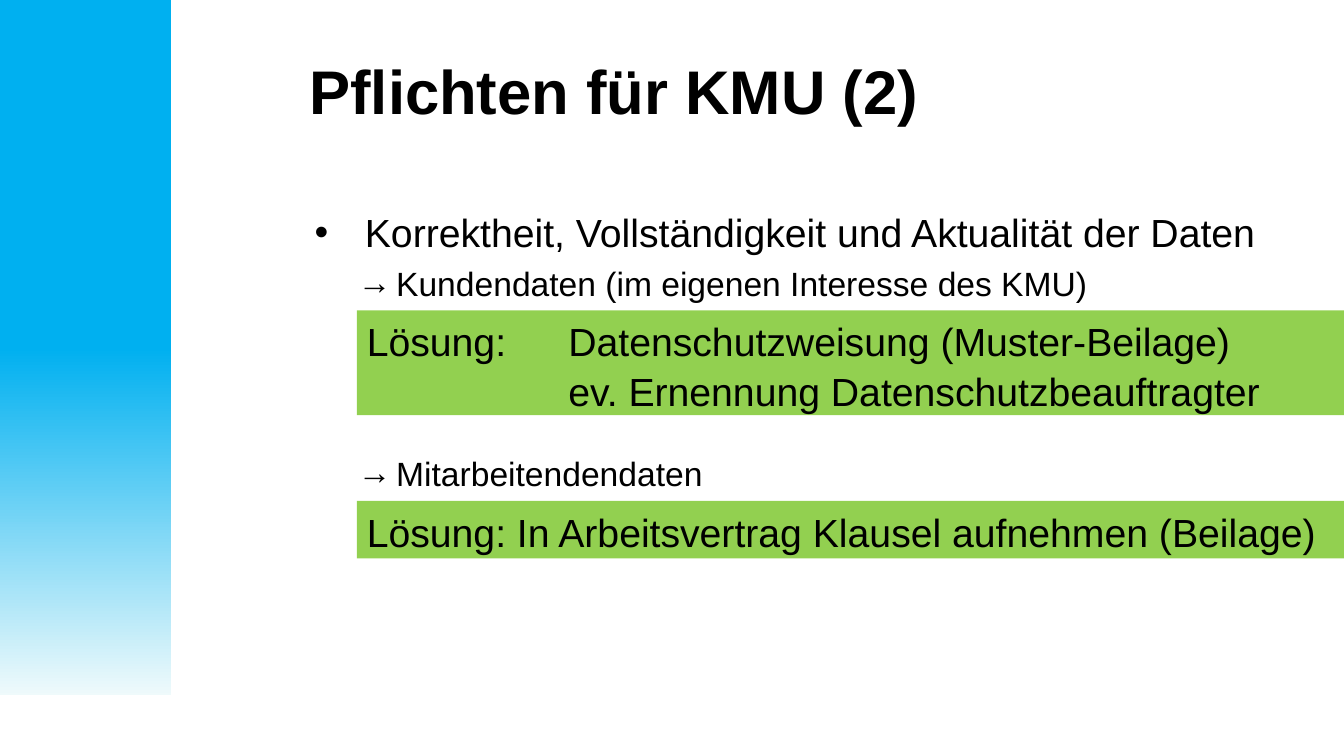
from dataclasses import dataclass

import pptx
import pptx.dml.color
import pptx.enum.dml
import pptx.enum.shapes
import pptx.enum.text
import pptx.oxml.ns
import pptx.util
from lxml import etree

COLUMNS, ROWS = 80, 45
CELL = pptx.util.Inches(1 / 6)


@dataclass(frozen=True)
class Theme:
    font: str = "Arial"
    text: str = "000000"
    band_top: str = "00B0F0"
    band_bottom: str = "EFFAFB"
    solution: str = "92D050"
    title_size: int = 44
    main_size: int = 28
    sub_size: int = 24


THEME = Theme()

# Bullet styles: character, left margin and hanging indent in inches
MAIN_BULLET = ("•", 0.88, 0.5)
SUB_BULLET = ("→", 1.19, 0.38)

# List entries: text, level, size, bullet, space before in points
DUTIES = [
    ("Korrektheit, Vollständigkeit und Aktualität der Daten",
     0, THEME.main_size, MAIN_BULLET, 0),
    ("Kundendaten (im eigenen Interesse des KMU)",
     1, THEME.sub_size, SUB_BULLET, 4.8),
    ("Mitarbeitendendaten", 1, THEME.sub_size, SUB_BULLET, 107.4),
]


def color(code):
    return pptx.dml.color.RGBColor.from_string(code)


def cells(*counts):
    """Turn grid cells into lengths."""
    return [round(count * CELL) for count in counts]


def place(shape, left, top, width, height):
    shape.left, shape.top, shape.width, shape.height = cells(
        left, top, width, height)


def format_runs(para, size, bold=False):
    for span in para.runs:
        span.font.name = THEME.font
        span.font.size = pptx.util.Pt(size)
        span.font.bold = bold
        span.font.color.rgb = color(THEME.text)


def add_property(para, tag, **attributes):
    return etree.SubElement(para._p.get_or_add_pPr(),
                            pptx.oxml.ns.qn(tag), attributes)


def set_bullet(para, character, margin, hanging):
    properties = para._p.get_or_add_pPr()
    properties.set("marL", str(pptx.util.Inches(margin)))
    properties.set("indent", str(-pptx.util.Inches(hanging)))
    add_property(para, "a:buFont", typeface=THEME.font)
    add_property(para, "a:buChar", char=character)


def set_tab(para, inches):
    tabs = add_property(para, "a:tabLst")
    etree.SubElement(tabs, pptx.oxml.ns.qn("a:tab"),
                     pos=str(pptx.util.Inches(inches)), algn="l")


def prepare_frame(frame, top_margin=0.05):
    frame.word_wrap = True
    frame.auto_size = pptx.enum.text.MSO_AUTO_SIZE.NONE
    frame.vertical_anchor = pptx.enum.text.MSO_ANCHOR.TOP
    frame.margin_top = pptx.util.Inches(top_margin)


def add_rectangle(page, left, top, width, height):
    box = page.shapes.add_shape(pptx.enum.shapes.MSO_SHAPE.RECTANGLE,
                                *cells(left, top, width, height))
    box.shadow.inherit = False
    box.line.fill.background()
    return box


def add_band(page):
    band = add_rectangle(page, 0, 0, 10.2, 41.4)
    band.fill.gradient()
    band.fill.gradient_angle = 270
    stops = ((0.5, THEME.band_top), (1, THEME.band_bottom))
    for stop, (position, code) in zip(band.fill.gradient_stops, stops):
        stop.position = position
        stop.color.rgb = color(code)


def fill_title(page, text):
    title = page.shapes.title
    place(title, 17.82, 2.52, 58.92, 7.5)
    prepare_frame(title.text_frame, 0.1)
    title.text_frame.text = text
    para = title.text_frame.paragraphs[0]
    para.alignment = pptx.enum.text.PP_ALIGN.LEFT
    format_runs(para, THEME.title_size, bold=True)


def fill_list(page, entries):
    body = page.placeholders[1]
    place(body, 15.84, 11.88, 63.18, 30.54)
    frame = body.text_frame
    prepare_frame(frame, 0.09)
    frame.text = "\n".join(entry[0] for entry in entries)
    for para, (_, level, size, bullet, before) in zip(frame.paragraphs, entries):
        para.level = level
        set_bullet(para, *bullet)
        para.space_before = pptx.util.Pt(before)
        format_runs(para, size)


def add_solution(page, top, height, text):
    box = add_rectangle(page, 21.24, top, 59.88, height)
    box.fill.solid()
    box.fill.fore_color.rgb = color(THEME.solution)
    prepare_frame(box.text_frame)
    box.text_frame.text = text
    for para in box.text_frame.paragraphs:
        set_tab(para, 2)
        para.alignment = pptx.enum.text.PP_ALIGN.LEFT
        para.line_spacing = 1.05
        format_runs(para, THEME.main_size)


def main():
    deck = pptx.Presentation()
    deck.slide_width, deck.slide_height = cells(COLUMNS, ROWS)
    page = deck.slides.add_slide(deck.slide_layouts[1])

    # Side band, title and list
    add_band(page)
    fill_title(page, "Pflichten für KMU (2)")
    fill_list(page, DUTIES)

    # Highlighted solutions
    add_solution(page, 18.48, 6.24,
                 "Lösung:\tDatenschutzweisung (Muster-Beilage)\n"
                 "\tev. Ernennung Datenschutzbeauftragter")
    add_solution(page, 29.82, 3.42,
                 "Lösung: In Arbeitsvertrag Klausel aufnehmen (Beilage)")

    deck.save("out.pptx")


if __name__ == "__main__":
    main()
